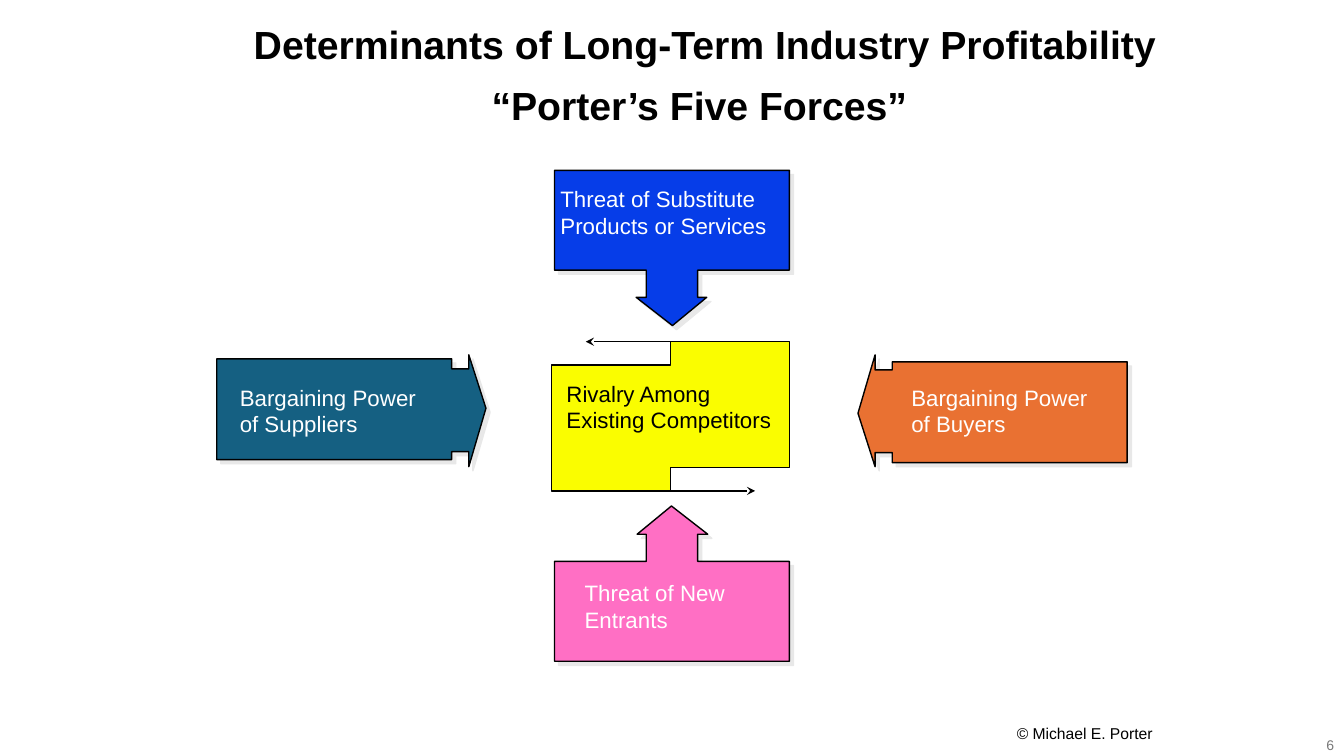
from lxml.etree import SubElement
from pptx import Presentation
from pptx.dml.color import RGBColor
from pptx.enum.shapes import MSO_CONNECTOR
from pptx.enum.text import MSO_ANCHOR, MSO_AUTO_SIZE, PP_ALIGN
from pptx.oxml.ns import qn
from pptx.util import Inches, Pt

# Grid: 13.33 columns by 7.5 rows
WIDE, HIGH = Inches(13.33), Inches(7.5)
COL, ROW = WIDE / 13.33, HIGH / 7.5

BLACK, WHITE, GREY = "000000", "FFFFFF", "797979"
BLUE, PINK, YELLOW = "063DE8", "FF6FC4", "FAFD00"
TEAL, ORANGE, SHADE = "156082", "E97132", "E8E8E8"

# Outlines of the forces; the opposite force is the same outline turned
DOWN = [(5.5, 1.69), (7.83, 1.69), (7.83, 2.68), (6.92, 2.68), (6.92, 2.95),
        (7.01, 2.95), (6.67, 3.23), (6.31, 2.95), (6.41, 2.95),
        (6.41, 2.68), (5.5, 2.68)]
RIGHT = [(2.15, 4.56), (2.15, 3.56), (4.48, 3.56), (4.48, 3.66),
         (4.65, 3.66), (4.65, 3.52), (4.82, 4.05), (4.65, 4.63),
         (4.65, 4.48), (4.48, 4.48), (4.48, 4.56)]
HALF = [(6.65, 4.87), (5.47, 4.87), (5.47, 3.62), (6.65, 3.62)]
FLOW = [(5.48, 4.87), (7.49, 4.87)]


def color(code):
    return RGBColor.from_string(code)


def place(x, y):
    return round(x * COL), round(y * ROW)


def turn(points, mid_x, mid_y):
    """Turn points by half a circle about a centre."""
    return [(2 * mid_x - x, 2 * mid_y - y) for x, y in points]


def effect(shape, shade=None):
    """Give a shape an effect list, empty or with a soft grey shadow."""
    effects = SubElement(shape._element.spPr, qn("a:effectLst"))
    if shade:
        cast = SubElement(effects, qn("a:outerShdw"), dist=str(Pt(4.2)),
                          dir="2700000", algn="ctr", rotWithShape="0")
        SubElement(cast, qn("a:srgbClr"), val=shade)


def outline(slide, points, fill, shade=None):
    first, *rest = [place(x, y) for x, y in points]
    pen = slide.shapes.build_freeform(*first, scale=1.0)
    pen.add_line_segments(rest, close=True)
    shape = pen.convert_to_shape()
    shape.fill.solid()
    shape.fill.fore_color.rgb = color(fill)
    shape.line.color.rgb = color(BLACK)
    shape.line.width = Pt(1)
    effect(shape, shade)


def arrow(slide, points):
    start, end = points
    line = slide.shapes.add_connector(
        MSO_CONNECTOR.STRAIGHT, *place(*start), *place(*end))
    line.line.color.rgb = color(BLACK)
    line.line.width = Pt(1)
    SubElement(line.line._get_or_add_ln(), qn("a:tailEnd"), type="stealth")
    effect(line)


def write(shape, text, size=15.9, ink=WHITE, bold=False, wrap=True,
          align=PP_ALIGN.LEFT, anchor=MSO_ANCHOR.TOP, space=None):
    frame = shape.text_frame
    frame.auto_size = MSO_AUTO_SIZE.NONE
    frame.word_wrap = wrap
    frame.vertical_anchor = anchor
    para = frame.paragraphs[0]
    para.text = text
    para.alignment = align
    para.line_spacing = space
    font = para.runs[0].font
    for run in para.runs:
        font = run.font
        font.name, font.size, font.bold = "Arial", Pt(size), bold
        font.color.rgb = color(ink)


def label(slide, area, text, fill=None, **style):
    x, y, wide, high = area
    box = slide.shapes.add_textbox(*place(x, y), *place(wide, high))
    if fill:
        box.fill.solid()
        box.fill.fore_color.rgb = color(fill)
    write(box, text, **style)


def main():
    deck = Presentation()
    deck.slide_width, deck.slide_height = WIDE, HIGH
    slide = deck.slides.add_slide(deck.slide_layouts[5])

    # Title
    title = slide.shapes.title
    title.left, title.top = place(2.28, 0.01)
    title.width, title.height = place(9.42, 1.26)
    write(title, "Determinants of Long-Term Industry Profitability\v"
          "“Porter’s Five Forces” ", size=28, ink=BLACK, bold=True,
          align=PP_ALIGN.CENTER, space=1.3)

    # Threats above and below
    outline(slide, DOWN, BLUE, SHADE)
    label(slide, (5.46, 1.79, 2.4, 0.91),
          "Threat of Substitute\vProducts or Services")
    outline(slide, turn(DOWN, 6.665, 4.125), PINK, SHADE)
    label(slide, (5.7, 5.7, 1.94, 0.64), "Threat of New Entrants", PINK)

    # Rivalry in the centre
    center = 6.65, 4.13
    arrow(slide, turn(FLOW, *center))
    arrow(slide, FLOW)
    outline(slide, HALF + turn(HALF, *center), YELLOW)
    label(slide, (5.52, 3.72, 2.27, 0.91),
          "Rivalry Among\vExisting Competitors", YELLOW, ink=BLACK)

    # Bargaining power at the sides
    outline(slide, RIGHT, TEAL, SHADE)
    label(slide, (2.28, 3.76, 2.1, 0.64),
          "Bargaining Power\vof Suppliers", wrap=False)
    outline(slide, turn(RIGHT, 6.665, 4.075), ORANGE, SHADE)
    label(slide, (8.94, 3.76, 2.1, 0.64),
          "Bargaining Power\vof Buyers", ORANGE, wrap=False)

    # Footer
    label(slide, (8.25, 7.13, 3.28, 0.29), "© Michael E. Porter",
          size=11.2, ink=BLACK, align=PP_ALIGN.RIGHT)
    label(slide, (10.33, 7.28, 3, 0.21), "6", size=10, ink=GREY,
          align=PP_ALIGN.RIGHT, anchor=MSO_ANCHOR.MIDDLE)

    deck.save("out.pptx")


if __name__ == "__main__":
    main()
